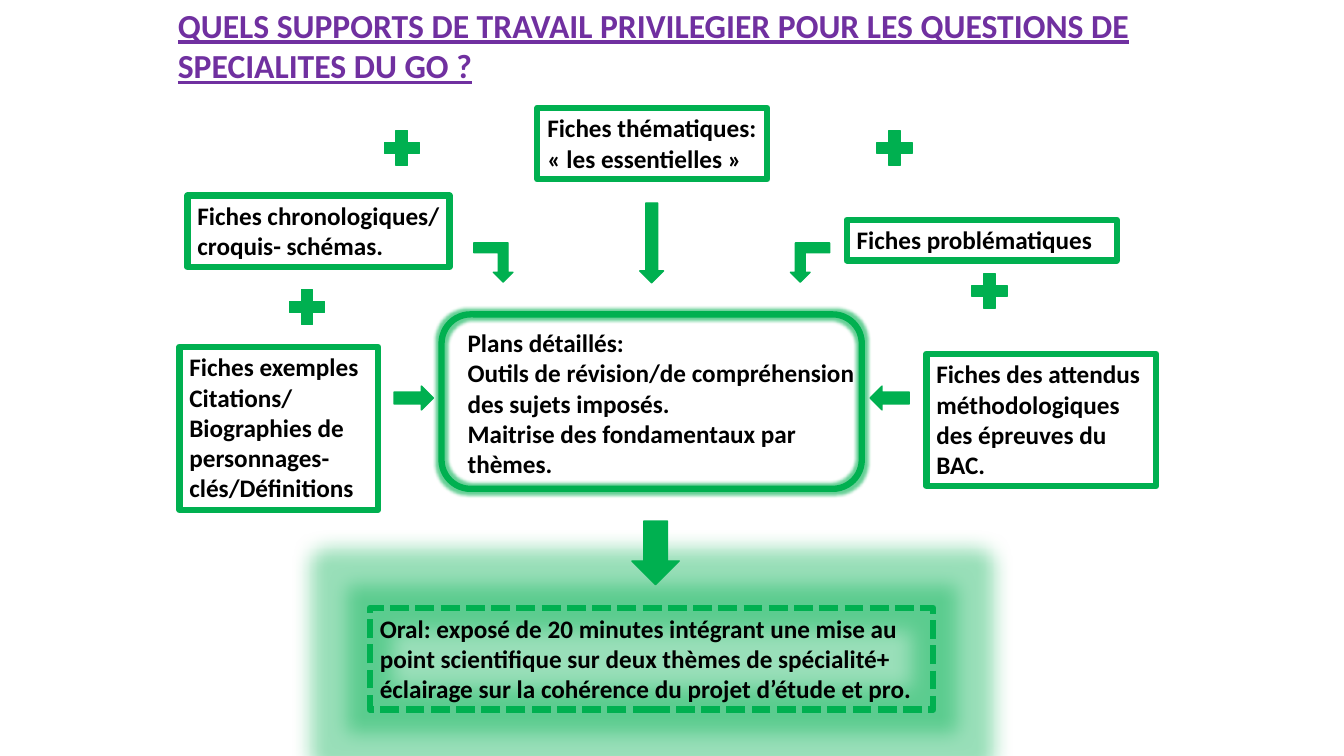
import pptx
import pptx.util
import pptx.dml.color
import pptx.enum.dml
import pptx.enum.shapes
import pptx.enum.text
import pptx.oxml
import pptx.oxml.ns
from dataclasses import dataclass

Pt = pptx.util.Pt
KIND = pptx.enum.shapes.MSO_SHAPE
RGB = pptx.dml.color.RGBColor.from_string


@dataclass(frozen=True)
class Theme:
    font: str = "Calibri"
    green: str = "00B050"
    purple: str = "7030A0"
    ink: str = "000000"
    title_size: int = 24
    body_size: int = 18
    frame_width: float = 4.5
    arrow_width: float = 1


THEME = Theme()
AXIS = 465.5  # vertical axis of the diagram, in points

# Boxes are (left, top, width, height) in points.
TITLE = ("QUELS SUPPORTS DE TRAVAIL PRIVILEGIER POUR LES QUESTIONS DE SPECIALITES DU GO ?",
         (120, 0, 720, 65.4))
PLANS = (["Plans détaillés:",
          "Outils de révision/de compréhension des sujets imposés.",
          "Maitrise des fondamentaux par thèmes."],
         (326.9, 230.4, 300, 116.6))
PLANS_FRAME = (315.4, 224.6, 300.2, 124.6)
ORAL = (["Oral: exposé de 20 minutes intégrant une mise au point scientifique sur deux "
         "thèmes de spécialité+ éclairage sur la cohérence du projet d’étude et pro."],
        (264.2, 434.2, 402.5, 72.7))
FICHES = [
    (["Fiches chronologiques/", "croquis- schémas."], (133.9, 139.7, 187.2, 51.1)),
    (["Fiches thématiques:", "«\u00a0les essentielles\u00a0»".replace("\u00a0", " ")],
     (383.8, 77, 164.2, 51.1)),
    (["Fiches problématiques"], (604.8, 157, 193, 29)),
    (["Fiches exemples", "Citations/", "Biographies de personnages-clés/Définitions"],
     (128.2, 247.7, 141.8, 116.6)),
    (["Fiches des attendus méthodologiques des épreuves du BAC."],
     (661.7, 252.7, 164.2, 94.5)),
]
PLUS_SIZE = 34
PLUSES = [(270, 88.6), (622, 88.6), (202.3, 202.3), (689.8, 190.8)]
SIDE_ARROW = (281.5, 275.8, 28, 17)
BENT_ARROW = (338.4, 173.5, 28, 28)
TOP_ARROW = (AXIS - 8.5, 145, 17, 57)
ORAL_ARROW = (451.4, 372.2, 33.8, 45.4)


def mirrored(box):
    left, top, width, height = box
    return 2 * AXIS - left - width, top, width, height


def add_figure(slide, kind, box, line_width, filled=False):
    figure = slide.shapes.add_shape(kind, *map(Pt, box))
    figure.shadow.inherit = False
    if filled:
        figure.fill.solid()
        figure.fill.fore_color.rgb = RGB(THEME.green)
    else:
        figure.fill.background()
    figure.line.color.rgb = RGB(THEME.green)
    figure.line.width = Pt(line_width)
    return figure


def add_frame(slide, kind, box):
    return add_figure(slide, kind, box, THEME.frame_width)


def add_arrow(slide, kind, box):
    return add_figure(slide, kind, box, THEME.arrow_width, filled=True)


def add_glow(figure, radius, opacity):
    """Put a green halo of the given radius (points) and opacity (percent) on a figure."""
    effects = figure.element.spPr.find(pptx.oxml.ns.qn("a:effectLst"))
    effects.append(pptx.oxml.parse_xml(
        f'<a:glow {pptx.oxml.ns.nsdecls("a")} rad="{Pt(radius)}">'
        f'<a:srgbClr val="{THEME.green}"><a:alpha val="{opacity * 1000}"/></a:srgbClr></a:glow>'))


def write(holder, lines, size=THEME.body_size, color=THEME.ink, underline=None):
    frame = holder.text_frame
    frame.word_wrap = True
    frame.auto_size = pptx.enum.text.MSO_AUTO_SIZE.SHAPE_TO_FIT_TEXT
    frame.vertical_anchor = pptx.enum.text.MSO_ANCHOR.TOP
    for index, line in enumerate(lines):
        paragraph = frame.add_paragraph() if index else frame.paragraphs[0]
        paragraph.alignment = pptx.enum.text.PP_ALIGN.LEFT
        run = paragraph.add_run()
        run.text = line
        run.font.name = THEME.font
        run.font.size = Pt(size)
        run.font.bold = True
        run.font.underline = underline
        run.font.color.rgb = RGB(color)


def main():
    deck = pptx.Presentation()
    deck.slide_width, deck.slide_height = Pt(960), Pt(540)
    slide = deck.slides.add_slide(deck.slide_layouts[6])

    add_glow(add_frame(slide, KIND.ROUNDED_RECTANGLE, PLANS_FRAME), 5, 60)
    lines, box = PLANS
    write(slide.shapes.add_textbox(*map(Pt, box)), lines)

    lines, box = ORAL
    oral = add_frame(slide, KIND.RECTANGLE, box)
    # SQUARE_DOT is the enum member that writes the sysDash preset's sibling; DASH gaps are set here
    oral.line.dash_style = pptx.enum.dml.MSO_LINE.DASH
    oral.element.spPr.ln.find(pptx.oxml.ns.qn("a:prstDash")).set("val", "sysDash")
    add_glow(oral, 28, 40)
    write(oral, lines)

    for lines, box in FICHES:
        write(add_frame(slide, KIND.RECTANGLE, box), lines)

    for left, top in PLUSES:
        add_arrow(slide, KIND.MATH_PLUS, (left, top, PLUS_SIZE, PLUS_SIZE))

    add_arrow(slide, KIND.DOWN_ARROW, TOP_ARROW)
    add_arrow(slide, KIND.DOWN_ARROW, ORAL_ARROW)
    add_arrow(slide, KIND.RIGHT_ARROW, SIDE_ARROW)
    add_arrow(slide, KIND.RIGHT_ARROW, mirrored(SIDE_ARROW)).rotation = 180
    left_bend = add_arrow(slide, KIND.BENT_UP_ARROW, BENT_ARROW)
    left_bend.element.spPr.get_or_add_xfrm().set("flipV", "1")
    add_arrow(slide, KIND.BENT_UP_ARROW, mirrored(BENT_ARROW)).rotation = 180

    title, box = TITLE
    write(slide.shapes.add_textbox(*map(Pt, box)), [title],
          THEME.title_size, THEME.purple, underline=True)

    deck.save("out.pptx")


if __name__ == "__main__":
    main()
